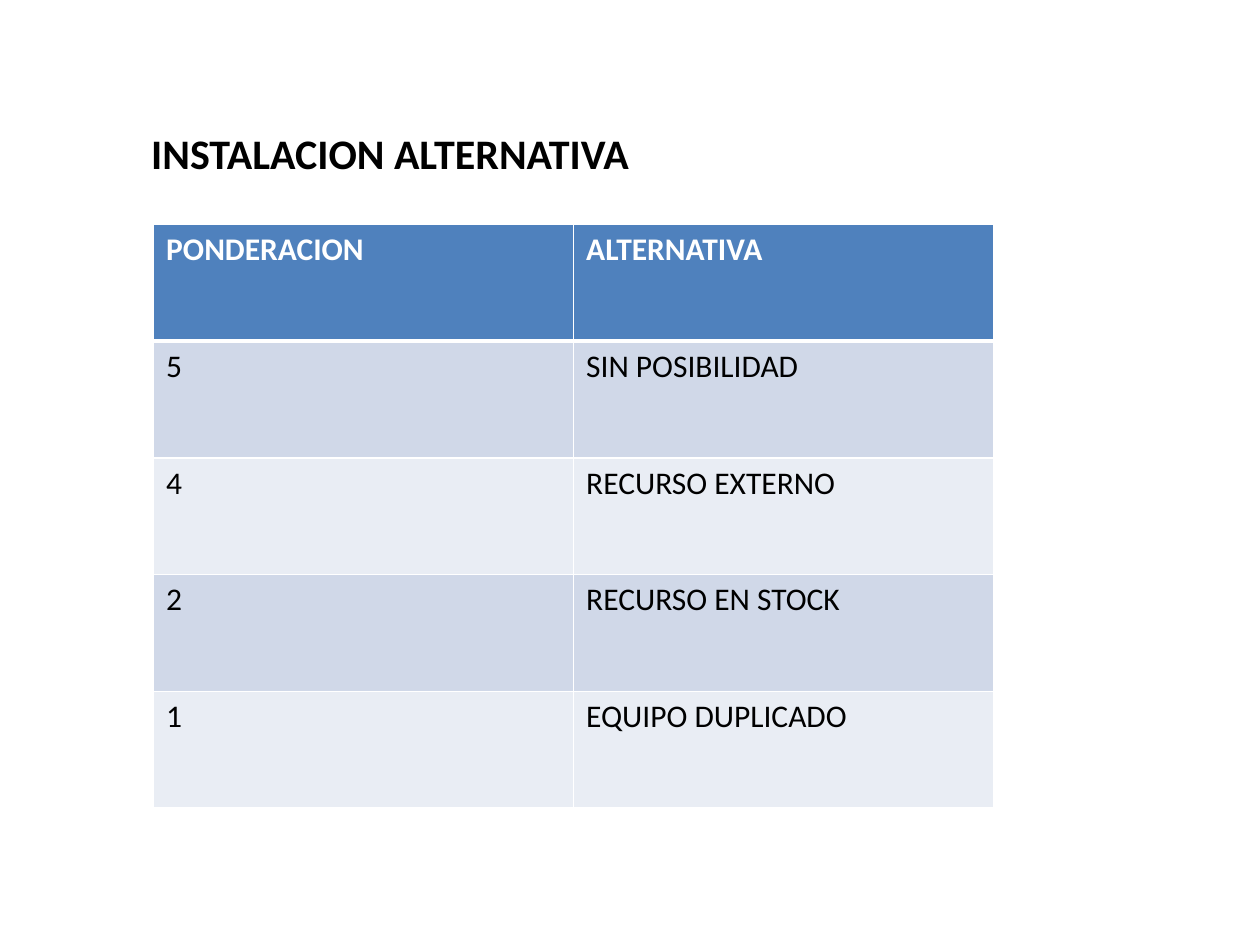
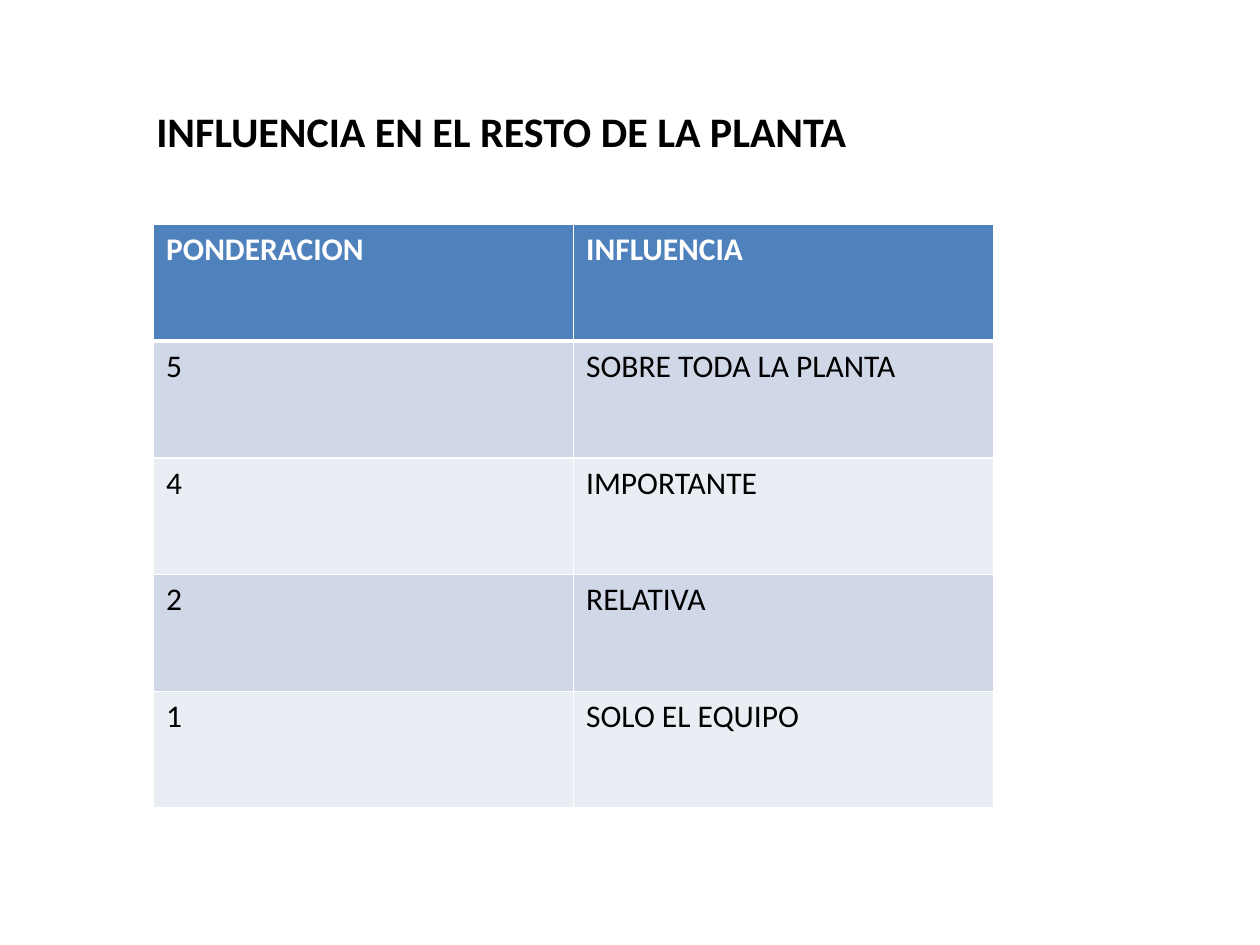
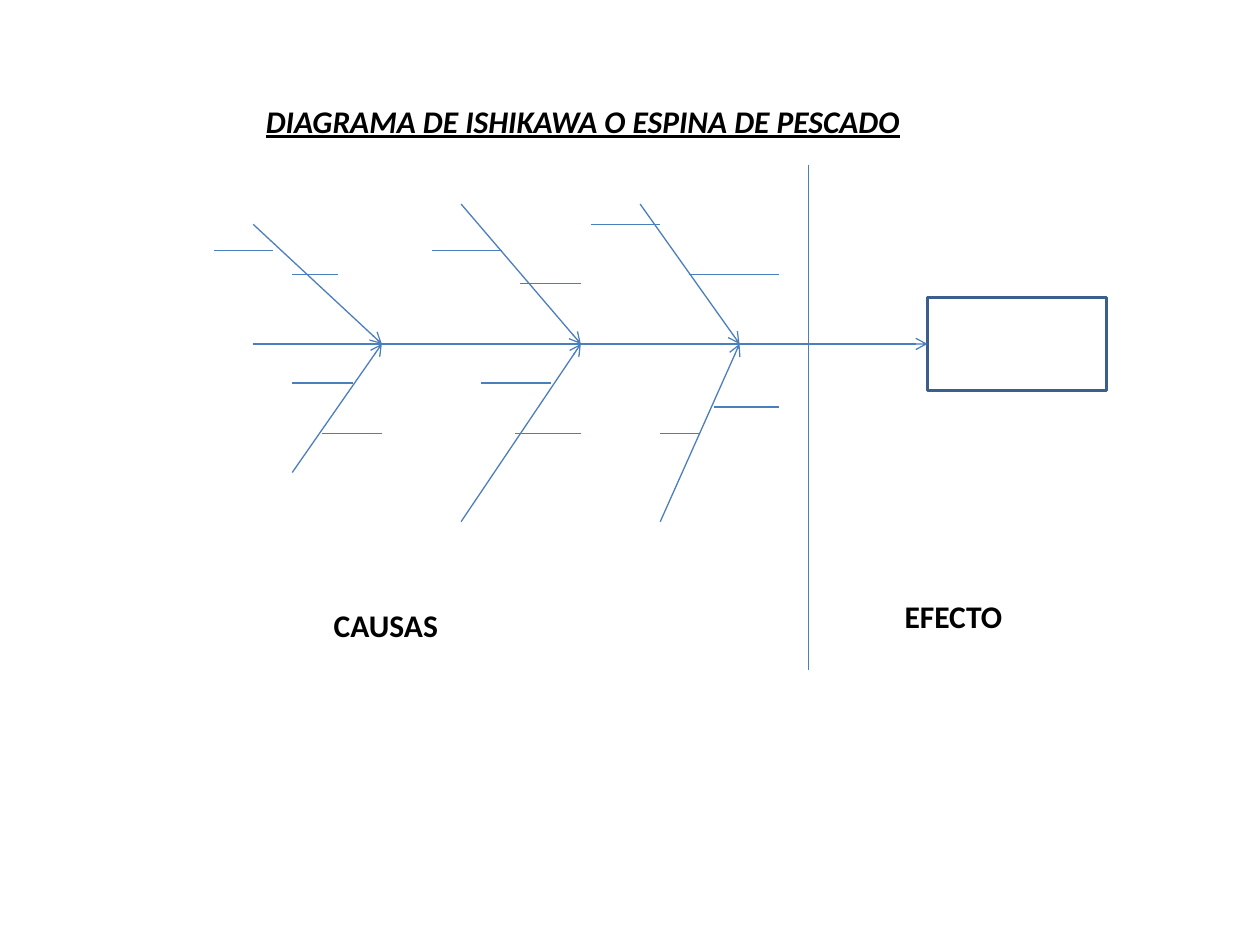
from pptx import Presentation
from pptx import util as u
from pptx.dml.color import RGBColor
from pptx.enum import shapes, text
from pptx.oxml.ns import qn
from lxml import etree

Pt = u.Pt
COLORS = {"ink": "000000", "paper": "FFFFFF", "header": "4F81BD", "band_dark": "D0D8E8",
          "band_light": "E9EDF4", "bone": "4B7EBC", "frame": "3A5F8C"}
FONT = "Calibri"
HEADING = {"size": Pt(24), "bold": True}
LABEL = {"size": Pt(18), "bold": True}
DIAGRAM_HEADING = {**LABEL, "italic": True, "underline": True}

# Each scale: title, title place (left, top, width, height), rows with the header first
SCALES = [
    ("INSTALACION ALTERNATIVA", (79.2, 69.1, 360, 36), [
        ("PONDERACION", "ALTERNATIVA"),
        ("5", "SIN POSIBILIDAD"),
        ("4", "RECURSO EXTERNO"),
        ("2", "RECURSO EN STOCK"),
        ("1", "EQUIPO DUPLICADO"),
    ]),
    ("INFLUENCIA EN EL RESTO DE LA PLANTA", (82.1, 56.9, 504.7, 36), [
        ("PONDERACION", "INFLUENCIA"),
        ("5", "SOBRE TODA LA PLANTA"),
        ("4", "IMPORTANTE"),
        ("2", "RELATIVA"),
        ("1", "SOLO EL EQUIPO"),
    ]),
]
TABLE_LEFT, TABLE_TOP, COLUMN_WIDTH, ROW_HEIGHT = 87.8, 128.2, 240, 66.7

DIAGRAM_TITLE = ("DIAGRAMA DE ISHIKAWA O ESPINA DE PESCADO", (144.7, 54.7, 396, 29))
DIAGRAM_LABELS = [("CAUSAS", (183.6, 342.7, 129, 29)), ("EFECTO", (509.8, 337.7, 129, 29))]
EFFECT_BOX = (530, 169.9, 102.2, 53.3)
SPINE_START = 144.7
DIVIDER = (462.2, 94.3, 462.2, 383)
# Each bone: joint on the spine, outer end, twigs as (y, from x, to x)
BONES = [
    (218.2, (144.7, 128.2), [(143.3, 122.4, 156.2), (157, 167, 193)]),
    (331.9, (263.5, 116.6), [(143.3, 286.6, 247), (162, 297.4, 331.9)]),
    (422.6, (365.8, 116.6), [(128.2, 377.3, 337.7), (157, 393.8, 445)]),
    (218.2, (167, 270), [(218.9, 201.6, 167), (247.7, 184.3, 218.2)]),
    (331.9, (263.5, 298.1), [(218.9, 314.6, 275), (247.7, 294.5, 331.9)]),
    (422.6, (377.3, 298.1), [(232.6, 408.2, 445), (247.7, 399.6, 377.3)]),
]


def rgb(name):
    return RGBColor.from_string(COLORS[name])


def points(values):
    return [Pt(value) for value in values]


def write(frame, words, style, color="ink"):
    para = frame.paragraphs[0]
    para.alignment = text.PP_ALIGN.LEFT
    span = para.add_run()
    span.text = words
    span.font.name = FONT
    span.font.color.rgb = rgb(color)
    for key, value in style.items():
        setattr(span.font, key, value)


def fill_frame(box, words, style):
    frame = box.text_frame
    frame.word_wrap = True
    frame.auto_size = text.MSO_AUTO_SIZE.SHAPE_TO_FIT_TEXT
    frame.vertical_anchor = text.MSO_ANCHOR.TOP
    write(frame, words, style)


def add_titled_page(deck, words, place, style):
    page = deck.slides.add_slide(deck.slide_layouts[5])
    title = page.shapes.title
    title.left, title.top, title.width, title.height = points(place)
    fill_frame(title, words, style)
    return page


def border(cell, side, width):
    line = etree.SubElement(cell._tc.get_or_add_tcPr(), qn(f"a:ln{side}"), w=str(Pt(width)))
    fill = etree.SubElement(line, qn("a:solidFill"))
    etree.SubElement(fill, qn("a:srgbClr"), val=COLORS["paper"])


def add_scale(page, rows):
    columns = len(rows[0])
    place = points((TABLE_LEFT, TABLE_TOP, columns * COLUMN_WIDTH, len(rows) * ROW_HEIGHT))
    table = page.shapes.add_table(len(rows), columns, *place).table
    for r, row in enumerate(rows):
        table.rows[r].height = Pt(ROW_HEIGHT)
        header = r == 0
        band = "header" if header else "band_dark" if r % 2 else "band_light"
        widths = {"L": 1, "R": 1, "T": 3 if r == 1 else 1, "B": 3 if header else 1}
        for c, words in enumerate(row):
            cell = table.cell(r, c)
            for side, width in widths.items():
                border(cell, side, width)
            cell.fill.solid()
            cell.fill.fore_color.rgb = rgb(band)
            write(cell.text_frame, words, {"size": Pt(18), "bold": header},
                  "paper" if header else "ink")


def add_line(page, ends, arrow=False):
    line = page.shapes.add_connector(shapes.MSO_CONNECTOR.STRAIGHT, *points(ends))
    line.line.color.rgb = rgb("bone")
    line.line.width = Pt(0.75)
    if arrow:
        etree.SubElement(line.line._get_or_add_ln(), qn("a:tailEnd"), type="arrow")
    etree.SubElement(line._element.spPr, qn("a:effectLst"))
    return line


def add_fishbone(page):
    left, top, width, height = EFFECT_BOX
    spine_y = top + height / 2
    effect = page.shapes.add_shape(shapes.MSO_SHAPE.RECTANGLE, *points(EFFECT_BOX))
    effect.shadow.inherit = False
    effect.fill.background()
    effect.line.color.rgb = rgb("frame")
    effect.line.width = Pt(2)
    spine = add_line(page, (SPINE_START, spine_y, left, spine_y), arrow=True)
    spine.end_connect(effect, 1)
    for joint, outer, twigs in BONES:
        add_line(page, (*outer, joint, spine_y), arrow=True)
        for y, start, end in twigs:
            add_line(page, (start, y, end, y))
    add_line(page, DIVIDER)
    for words, place in DIAGRAM_LABELS:
        fill_frame(page.shapes.add_textbox(*points(place)), words, LABEL)


def main():
    deck = Presentation()
    deck.slide_width, deck.slide_height = Pt(720), Pt(540)
    for words, place, rows in SCALES:
        add_scale(add_titled_page(deck, words, place, HEADING), rows)
    add_fishbone(add_titled_page(deck, *DIAGRAM_TITLE, DIAGRAM_HEADING))
    deck.save("out.pptx")


if __name__ == "__main__":
    main()
